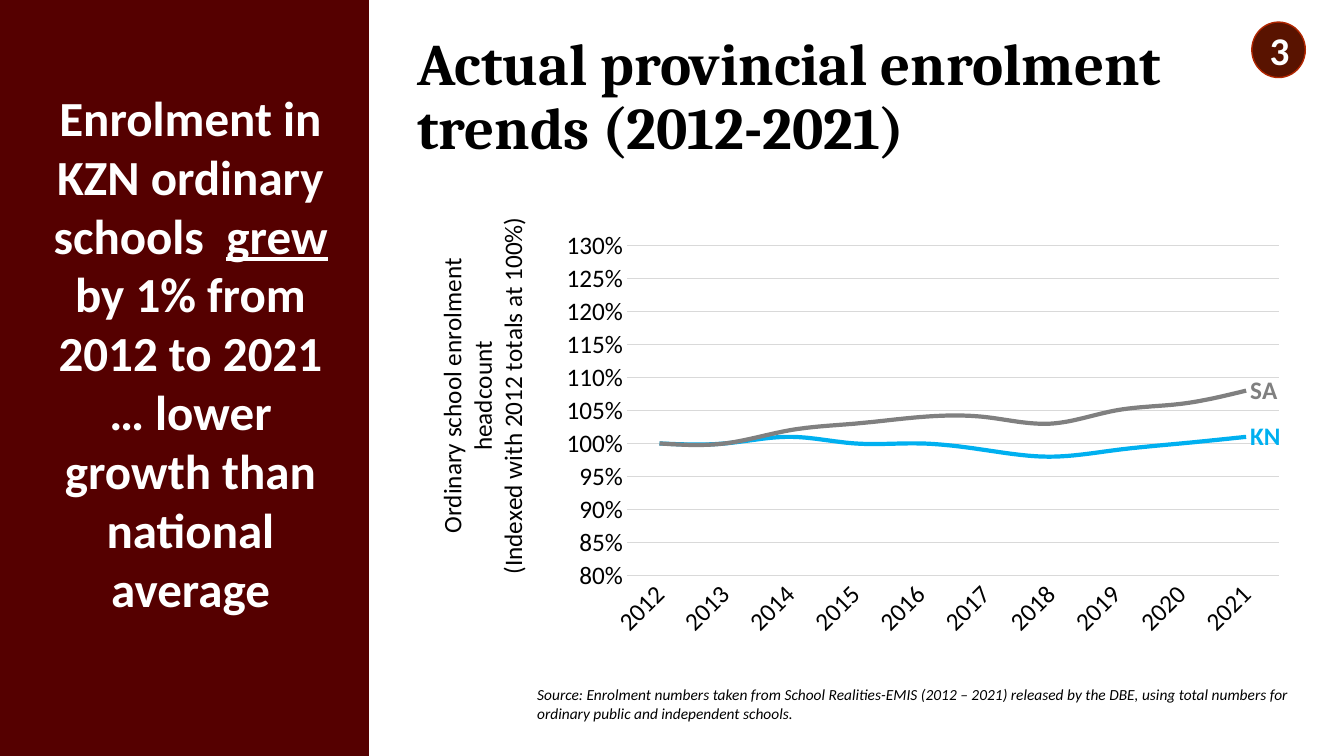
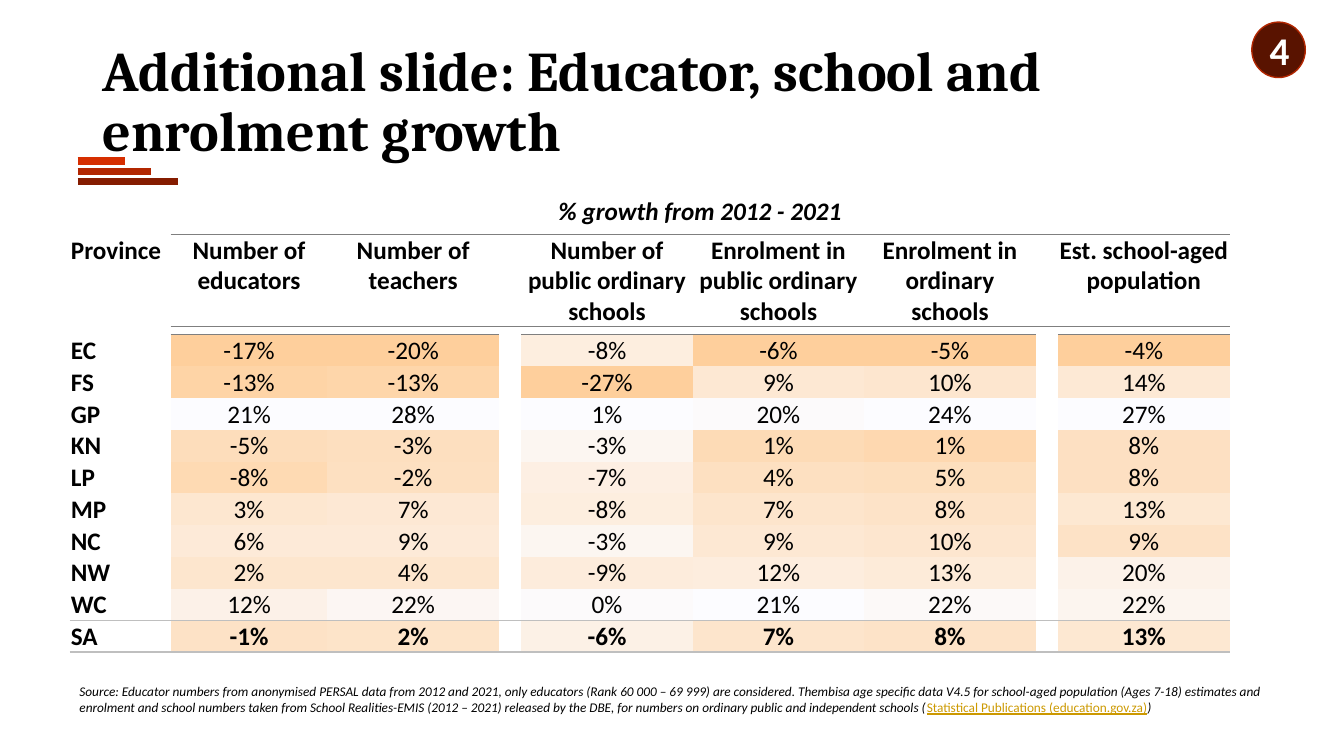
"""Build two slides on provincial enrolment trends and growth."""
from dataclasses import dataclass
from typing import NamedTuple, Optional

from lxml import etree
from pptx import Presentation
from pptx.chart.data import CategoryChartData
from pptx.dml.color import RGBColor
from pptx.enum.chart import XL_CHART_TYPE, XL_LABEL_POSITION, XL_TICK_MARK
from pptx.enum.shapes import MSO_CONNECTOR, MSO_SHAPE
from pptx.enum.text import MSO_ANCHOR, PP_ALIGN
from pptx.oxml.ns import qn
from pptx.util import Pt

LINE_CHART = XL_CHART_TYPE.LINE
LABEL_RIGHT = XL_LABEL_POSITION.RIGHT
NO_TICK = XL_TICK_MARK.NONE
STRAIGHT = MSO_CONNECTOR.STRAIGHT
RECTANGLE, OVAL = MSO_SHAPE.RECTANGLE, MSO_SHAPE.OVAL
TOP, MIDDLE, BOTTOM = MSO_ANCHOR.TOP, MSO_ANCHOR.MIDDLE, MSO_ANCHOR.BOTTOM
LEFT, CENTER = PP_ALIGN.LEFT, PP_ALIGN.CENTER
PLAIN_TABLE = "{2D5ABB26-0587-4C30-8999-92F81FD0307C}"


@dataclass(frozen=True)
class Theme:
    heading: str = "Cambria"
    body: str = "Calibri"
    ink: str = "000000"
    white: str = "FFFFFF"
    panel: str = "550000"
    badge: str = "591300"
    badge_line: str = "B22600"
    bars: tuple[str, ...] = ("D62E00", "B22600", "851C00")
    grid: str = "D9D9D9"
    header_rule: str = "7F7F7F"
    total_rule: str = "BFBFBF"
    link: str = "CC9900"
    heat_low: str = "FECF9C"
    heat_high: str = "FCFCFF"
    panel_size: float = 35
    badge_size: float = 28
    text_size: float = 18


THEME = Theme()


class Box(NamedTuple):
    left: float
    top: float
    width: float
    height: float


class Span(NamedTuple):
    text: str
    underline: bool = False
    italic: Optional[bool] = None
    color: Optional[str] = None


class Style(NamedTuple):
    size: float
    font: str = THEME.body
    color: str = THEME.ink
    bold: bool = False
    italic: bool = False
    align: PP_ALIGN = LEFT
    spacing: float = 1


class Trend(NamedTuple):
    name: str
    values: tuple[float, ...]
    color: str


class Column(NamedTuple):
    width: float
    heading: str = ""
    values: tuple[int, ...] = ()


TRENDS = (
    Trend("KN", (1, 1, 1.01, 1, 1, 0.99, 0.98, 0.99, 1, 1.01), "00B0F0"),
    Trend("SA", (1, 1, 1.02, 1.03, 1.04, 1.04, 1.03, 1.05, 1.06, 1.08), "808080"),
)
PROVINCES = ("EC", "FS", "GP", "KN", "LP", "MP", "NC", "NW", "WC", "SA")
GAP = Column(16)
COLUMNS = (
    Column(72, "Province"),
    Column(112, "Number of educators", (-17, -13, 21, -5, -8, 3, 6, 2, 12, -1)),
    Column(122.5, "Number of teachers", (-20, -13, 28, -3, -2, 7, 9, 4, 22, 2)),
    GAP,
    Column(122.5, "Number of public ordinary schools",
           (-8, -27, 1, -3, -7, -8, -3, -9, 0, -6)),
    Column(122.5, "Enrolment in public ordinary schools",
           (-6, 9, 20, 1, 4, 7, 9, 12, 21, 7)),
    Column(122.5, "Enrolment in ordinary schools",
           (-5, 10, 24, 1, 5, 8, 10, 13, 22, 8)),
    GAP,
    Column(122.5, "Est. school-aged population",
           (-4, 14, 27, 8, 8, 13, 9, 20, 22, 13)),
)
HEADER_HEIGHTS = (27.4, 66.2, 5.5)
PROVINCE_HEIGHT = 22.7
FIRST_PROVINCE = len(HEADER_HEIGHTS)
LAST_ROW = FIRST_PROVINCE + len(PROVINCES) - 1


def points(box: Box) -> tuple[Pt, ...]:
    return tuple(Pt(length) for length in box)


def rgb(color: str) -> RGBColor:
    return RGBColor.from_string(color)


def style_font(font, style: Style) -> None:
    font.name, font.size = style.font, Pt(style.size)
    font.bold, font.italic = style.bold, style.italic
    font.color.rgb = rgb(style.color)


def fill_frame(frame, lines: list[list[Span]], style: Style, anchor: MSO_ANCHOR) -> None:
    frame.word_wrap = True
    frame.vertical_anchor = anchor
    for index, spans in enumerate(lines):
        para = frame.add_paragraph() if index else frame.paragraphs[0]
        para.alignment, para.line_spacing = style.align, style.spacing
        for span in spans:
            run = para.add_run()
            run.text = span.text
            style_font(run.font, style)
            run.font.underline = span.underline
            if span.italic is not None:
                run.font.italic = span.italic
            if span.color:
                run.font.color.rgb = rgb(span.color)


def add_text(page, box: Box, lines: list[list[Span]], style: Style,
             anchor: MSO_ANCHOR = MIDDLE) -> None:
    frame = page.shapes.add_textbox(*points(box)).text_frame
    fill_frame(frame, lines, style, anchor)


def add_title(page, box: Box, text: str, size: float) -> None:
    style = Style(size, THEME.heading, bold=True, spacing=0.9)
    add_text(page, box, [[Span(text)]], style)


def add_filled(page, kind: MSO_SHAPE, box: Box, color: str, line: Optional[str] = None):
    shape = page.shapes.add_shape(kind, *points(box))
    shape.shadow.inherit = False
    shape.fill.solid()
    shape.fill.fore_color.rgb = rgb(color)
    if line:
        shape.line.color.rgb = rgb(line)
        shape.line.width = Pt(1)
    else:
        shape.line.fill.background()
    return shape


def add_badge(page, number: int) -> None:
    badge = add_filled(page, OVAL, Box(894.2, 15.8, 38.2, 39.6), THEME.badge, THEME.badge_line)
    style = Style(THEME.badge_size, color=THEME.white, bold=True, align=CENTER)
    fill_frame(badge.text_frame, [[Span(str(number))]], style, MIDDLE)


def add_bars(page) -> None:
    for index, (color, right) in enumerate(zip(THEME.bars, (89.3, 108, 127.4))):
        top = Pt(115.2 + 7.2 * index)
        bar = page.shapes.add_connector(STRAIGHT, Pt(55.4), top, Pt(right), top)
        bar.line.color.rgb = rgb(color)
        bar.line.width = Pt(5.5)
        etree.SubElement(bar._element.spPr, qn("a:effectLst"))


def set_layout(parent, position: int, **values: object) -> None:
    layout = parent.find(qn("c:layout"))
    if layout is None:
        layout = etree.Element(qn("c:layout"))
        parent.insert(position, layout)
    manual = etree.SubElement(layout, qn("c:manualLayout"))
    for tag, value in values.items():
        etree.SubElement(manual, qn(f"c:{tag}"), val=str(value))


def label_last_point(series, trend: Trend) -> None:
    label = series.points[len(trend.values) - 1].data_label
    style_font(label.font, Style(THEME.text_size, color=trend.color, bold=True))
    label.position = LABEL_RIGHT
    series.data_labels.show_value = False
    for element in series._element.iter(qn("c:dLbl")):
        element.find(qn("c:showVal")).set("val", "0")
        element.find(qn("c:showSerName")).set("val", "1")


def add_trend_chart(page, box: Box) -> None:
    data = CategoryChartData(number_format="0%")
    data.categories = [str(year) for year in range(2012, 2022)]
    for trend in TRENDS:
        data.add_series(trend.name, trend.values)
    chart = page.shapes.add_chart(LINE_CHART, *points(box), data).chart
    chart.has_legend = chart.has_title = False
    style = Style(THEME.text_size)
    style_font(chart.font, style)
    for series, trend in zip(chart.plots[0].series, TRENDS):
        series.smooth = True
        series.format.line.color.rgb = rgb(trend.color)
        series.format.line.width = Pt(3)
        label_last_point(series, trend)

    years, share = chart.category_axis, chart.value_axis
    for axis in (years, share):
        axis.major_tick_mark = axis.minor_tick_mark = NO_TICK
        style_font(axis.tick_labels.font, style)
    years._element.find(qn("c:txPr")).find(qn("a:bodyPr")).set("rot", "-2700000")
    share.minimum_scale, share.maximum_scale, share.major_unit = 0.8, 1.3, 0.05
    share.tick_labels.number_format = "0%"
    share.tick_labels.number_format_is_linked = False
    share.format.line.fill.background()
    for line in (years.format.line, share.major_gridlines.format.line):
        line.color.rgb = rgb(THEME.grid)
        line.width = Pt(0.75)

    title = share.axis_title
    title.text_frame.text = ("Ordinary school enrolment headcount\n"
                             "(Indexed with 2012 totals at 100%)")
    for para in title.text_frame.paragraphs:
        style_font(para.font, style)
        style_font(para.runs[0].font, style)
    turned = title.text_frame._txBody.find(qn("a:bodyPr"))
    turned.set("rot", "-5400000")
    turned.set("vert", "horz")
    set_layout(title._element, 1, xMode="edge", yMode="edge", x=0.01, y=0.07)
    set_layout(chart._chartSpace.chart.plotArea, 0, layoutTarget="inner", xMode="edge",
               yMode="edge", x=0.233, y=0.134, w=0.746, h=0.683)


def heat(value: int, values: tuple[int, ...]) -> str:
    share = (value - min(values)) / (max(values) - min(values))
    pairs = zip(bytes.fromhex(THEME.heat_low), bytes.fromhex(THEME.heat_high))
    return "".join(f"{round(low + share * (high - low)):02X}" for low, high in pairs)


def rule_below(row: int, column: int) -> Optional[str]:
    if row >= LAST_ROW - 1:
        return THEME.total_rule
    if (row == 0 and column) or (row == 1 and column and COLUMNS[column].heading):
        return THEME.header_rule
    return None


def add_rule(cell, tag: str, color: Optional[str]) -> None:
    if color:
        line = etree.SubElement(cell._tc.get_or_add_tcPr(), qn(tag), w=str(Pt(1)))
        fill = etree.SubElement(line, qn("a:solidFill"))
        etree.SubElement(fill, qn("a:srgbClr"), val=color)


def cell_text(row: int, column: int) -> str:
    if row == 0:
        return "% growth from 2012 - 2021" if column == 1 else ""
    if row == 1:
        return COLUMNS[column].heading
    if row < FIRST_PROVINCE:
        return ""
    index = row - FIRST_PROVINCE
    if column == 0:
        return PROVINCES[index]
    values = COLUMNS[column].values
    return f"{values[index]}%" if values else ""


def fill_cell(cell, row: int, column: int) -> None:
    cell.margin_left = cell.margin_right = cell.margin_top = Pt(0.75)
    cell.margin_bottom = Pt(0)
    add_rule(cell, "a:lnT", rule_below(row - 1, column) if row else None)
    add_rule(cell, "a:lnB", rule_below(row, column))
    values = COLUMNS[column].values
    if values and row >= FIRST_PROVINCE:
        cell.fill.solid()
        cell.fill.fore_color.rgb = rgb(heat(values[row - FIRST_PROVINCE], values))
    else:
        cell.fill.background()
    text = cell_text(row, column)
    if text:
        bold = row < FIRST_PROVINCE or row == LAST_ROW or column == 0
        style = Style(THEME.text_size, bold=bold, italic=row == 0,
                      align=CENTER if column else LEFT)
        fill_frame(cell.text_frame, [[Span(text)]], style, BOTTOM)
    else:
        etree.SubElement(cell.text_frame.paragraphs[0]._p, qn("a:endParaRPr"), sz="100")


def add_growth_table(page, left: float, top: float) -> None:
    heights = HEADER_HEIGHTS + (PROVINCE_HEIGHT,) * len(PROVINCES)
    box = Box(left, top, sum(column.width for column in COLUMNS), sum(heights))
    table = page.shapes.add_table(len(heights), len(COLUMNS), *points(box)).table
    table.first_row = table.horz_banding = False
    table._tbl.tblPr.find(qn("a:tableStyleId")).text = PLAIN_TABLE
    for index, column in enumerate(COLUMNS):
        table.columns[index].width = Pt(column.width)
    for row, height in enumerate(heights):
        table.rows[row].height = Pt(height)
        for column in range(len(COLUMNS)):
            fill_cell(table.cell(row, column), row, column)
    table.cell(0, 1).merge(table.cell(0, len(COLUMNS) - 1))


def build_trend_page(page) -> None:
    add_title(page, Box(290.9, 12.2, 585.4, 116.6),
              "Actual provincial enrolment trends (2012-2021)", 42)
    add_text(page, Box(376.6, 483.1, 576.7, 39.6), [[Span(
        "Source: Enrolment numbers taken from School Realities-EMIS (2012 – 2021) released by "
        "the DBE, using total numbers for ordinary public and independent schools.")]],
        Style(11, italic=True))
    add_trend_chart(page, Box(302.4, 128.9, 624.2, 345.6))
    add_filled(page, RECTANGLE, Box(0, 0, 263.5, 540), THEME.panel)
    add_badge(page, 3)
    add_text(page, Box(18, 59, 236.2, 396), [
        [Span("Enrolment in KZN ordinary schools  "), Span("grew ", underline=True),
         Span("by 1% from 2012 to 2021")],
        [Span("… lower growth than national average")],
    ], Style(THEME.panel_size, color=THEME.white, bold=True, align=CENTER), TOP)


def build_growth_page(page) -> None:
    add_bars(page)
    add_title(page, Box(66.2, 21.6, 828, 104.4),
              "Additional slide: Educator, school and enrolment growth", 40)
    add_growth_table(page, 49.9, 139.9)
    add_badge(page, 4)
    add_text(page, Box(49.7, 484.6, 859.7, 30.2), [[
        Span("Source: Educator numbers from anonymised PERSAL data from 2012 and 2021, only "
             "educators (Rank 60 000 – 69 999) are considered. Thembisa age specific data V4.5 "
             "for school-aged population (Ages 7-18) estimates and enrolment and school numbers "
             "taken from School Realities-EMIS (2012 – 2021) released by the DBE, for numbers "
             "on ordinary public and independent schools ("),
        Span("Statistical Publications (education.gov.za)", True, False, THEME.link),
        Span(")"),
    ]], Style(9.5, italic=True), TOP)


def main() -> None:
    deck = Presentation()
    deck.slide_width, deck.slide_height = Pt(960), Pt(540)
    for build in (build_trend_page, build_growth_page):
        build(deck.slides.add_slide(deck.slide_layouts[6]))
    deck.save("out.pptx")


if __name__ == "__main__":
    main()
